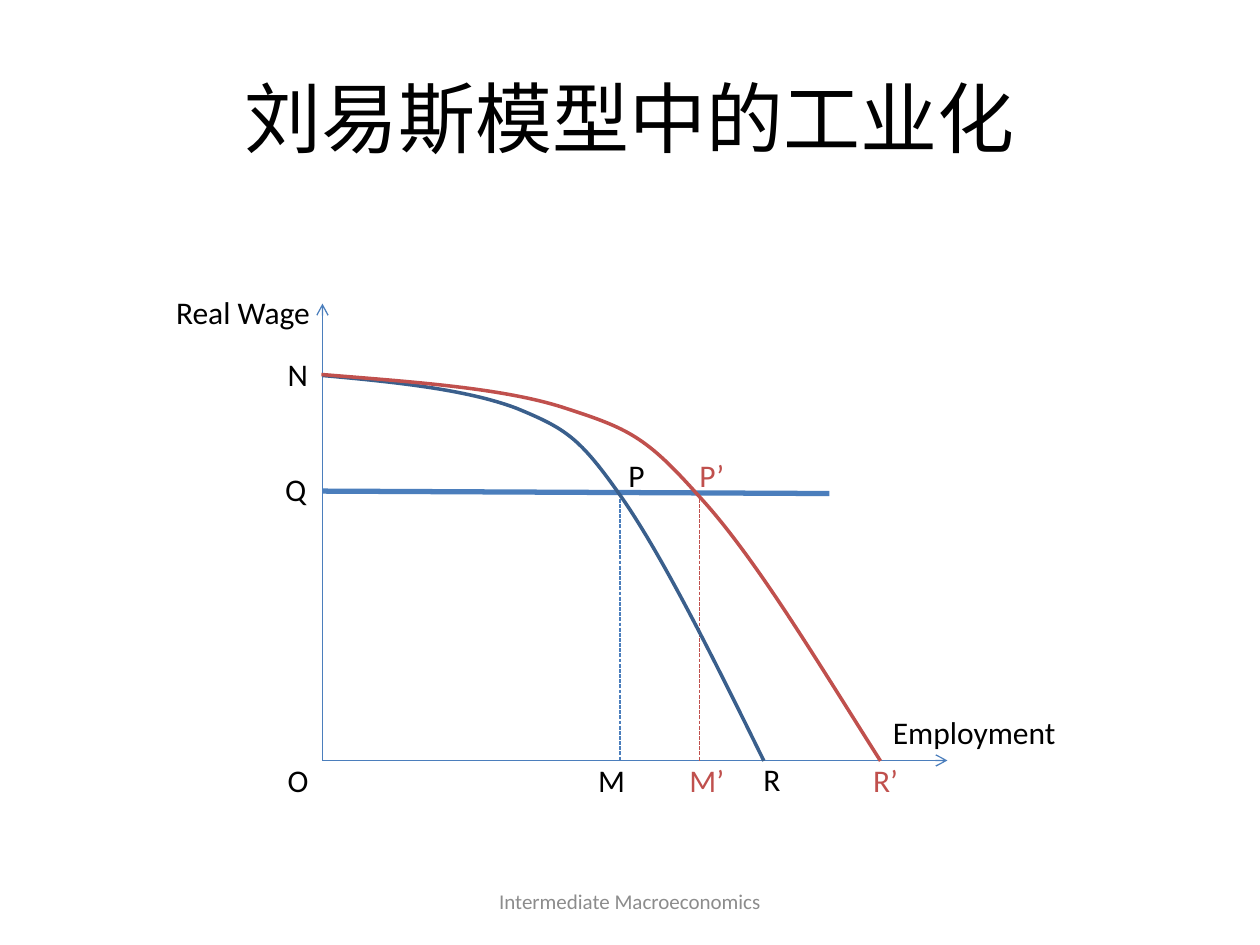
from lxml import etree
from pptx import Presentation
from pptx.dml.color import RGBColor
from pptx.enum.dml import MSO_LINE
from pptx.enum.shapes import MSO_CONNECTOR
from pptx.enum.text import MSO_ANCHOR, MSO_AUTO_SIZE, PP_ALIGN
from pptx.oxml.ns import qn
from pptx.util import Cm, Pt

STRAIGHT = MSO_CONNECTOR.STRAIGHT
DASH = MSO_LINE.SQUARE_DOT
MIDDLE, TOP = MSO_ANCHOR.MIDDLE, MSO_ANCHOR.TOP
CENTER, LEFT = PP_ALIGN.CENTER, PP_ALIGN.LEFT
FIT, FIXED = MSO_AUTO_SIZE.SHAPE_TO_FIT_TEXT, MSO_AUTO_SIZE.NONE
BLACK, GRAY, BLUE, NAVY, RED = "000000", "8C8C8C", "4B7EBC", "3A5F8C", "C0504D"


def color(value):
    return RGBColor.from_string(value)


def add_text(text, left, top, width, height, size=18, font_color=BLACK,
             wrap=True, anchor=TOP, align=LEFT, auto_size=FIT):
    shape = slide.shapes.add_textbox(Cm(left), Cm(top), Cm(width), Cm(height))
    frame_format = {"word_wrap": wrap, "vertical_anchor": anchor, "auto_size": auto_size}
    for name, value in frame_format.items():
        setattr(shape.text_frame, name, value)
    paragraph = shape.text_frame.paragraphs[0]
    paragraph.alignment = align
    run = paragraph.add_run()
    run.text = text
    for name, value in {"name": "Calibri", "size": Pt(size)}.items():
        setattr(run.font, name, value)
    run.font.color.rgb = color(font_color)


presentation = Presentation()
presentation.slide_width, presentation.slide_height = Cm(25.4), Cm(19.05)
slide = presentation.slides.add_slide(presentation.slide_layouts[6])

# Title and footer
centered = {"anchor": MIDDLE, "align": CENTER, "auto_size": FIXED}
add_text("刘易斯模型中的工业化", 1.27, 0.76, 22.86, 3.18, size=44, **centered)
add_text("Intermediate Macroeconomics", 8.68, 17.65, 8.04, 1.02,
         size=12, font_color=GRAY, **centered)

# Axes, wage line and dashed drops to the employment axis
origin_x, origin_y = 6.5, 15.33
wage_y, drop_end = 9.95, 15.34
lines = [
    # start x, start y, end x, end y, color, width, dash, arrow
    (origin_x, origin_y, 19.1, origin_y, BLUE, 0.75, None, True),
    (origin_x, origin_y, origin_x, 6.12, BLUE, 0.75, None, True),
    (origin_x, 9.9, 16.72, wage_y, BLUE, 3, None, False),
    (12.5, wage_y, 12.5, drop_end, BLUE, 0.75, DASH, False),
    (14.1, wage_y, 14.1, drop_end, RED, 0.75, DASH, False),
]
for start_x, start_y, end_x, end_y, line_color, width, dash, arrow in lines:
    connector = slide.shapes.add_connector(
        STRAIGHT, Cm(start_x), Cm(start_y), Cm(end_x), Cm(end_y))
    connector.line.color.rgb = color(line_color)
    for name, value in {"width": Pt(width), "dash_style": dash}.items():
        setattr(connector.line, name, value)
    if arrow:
        etree.SubElement(connector.get_or_add_ln(), qn("a:tailEnd"), type="arrow")
    etree.SubElement(connector._element.spPr, qn("a:effectLst"))

# Labor demand curves: a start point, then two handles and an end per Bezier piece
curves = [
    (NAVY, [(6.5, 7.57), (7.95, 7.7), (9.4, 7.85), (10.41, 8.23),
            (11.4, 8.64), (11.68, 8.81), (12.52, 10.01),
            (13.34, 11.18), (14.38, 13.26), (15.4, 15.34)]),
    (RED, [(6.48, 7.55), (8.31, 7.7), (10.16, 7.82), (11.4, 8.23),
           (12.67, 8.64), (13.03, 8.81), (14.07, 9.98),
           (15.19, 11.18), (16.43, 13.26), (17.75, 15.34)]),
]
for curve_color, points in curves:
    start, *vertices = [(Cm(x), Cm(y)) for x, y in points]
    builder = slide.shapes.build_freeform(*start)
    builder.add_line_segments(vertices, close=False)
    shape = builder.convert_to_shape()
    # Merge every three line segments into one cubic Bezier segment
    segments = list(shape._element.iter(qn("a:lnTo")))
    for first in range(0, len(segments), 3):
        bezier = etree.Element(qn("a:cubicBezTo"))
        segments[first].addprevious(bezier)
        for segment in segments[first:first + 3]:
            bezier.append(segment[0])
            segment.getparent().remove(segment)
    shape.shadow.inherit = False
    shape.fill.background()
    shape.line.color.rgb = color(curve_color)
    shape.line.width = Pt(2)

# Axis names
label_height = 1.02
add_text("Employment", 17.75, 14.25, 3.84, label_height, wrap=False)
add_text("Real Wage", 3.3, 5.79, 4.75, label_height)

# Point labels
below_axis, above_wage = 15.21, 9.06
point_labels = [
    ("N", 5.55, 7.04, BLACK),
    ("Q", 5.5, 9.35, BLACK),
    ("O", 5.55, below_axis, BLACK),
    ("M", 11.81, below_axis, BLACK),
    ("R", 15.14, 15.19, BLACK),
    ("P", 12.42, above_wage, BLACK),
    ("P’", 13.85, above_wage, RED),
    ("M’", 13.65, below_axis, RED),
    ("R’", 17.35, below_axis, RED),
]
for text, left, top, label_color in point_labels:
    label_width = 1.02 if text == "O" else 1.37
    add_text(text, left, top, label_width, label_height, font_color=label_color)

presentation.save("out.pptx")
